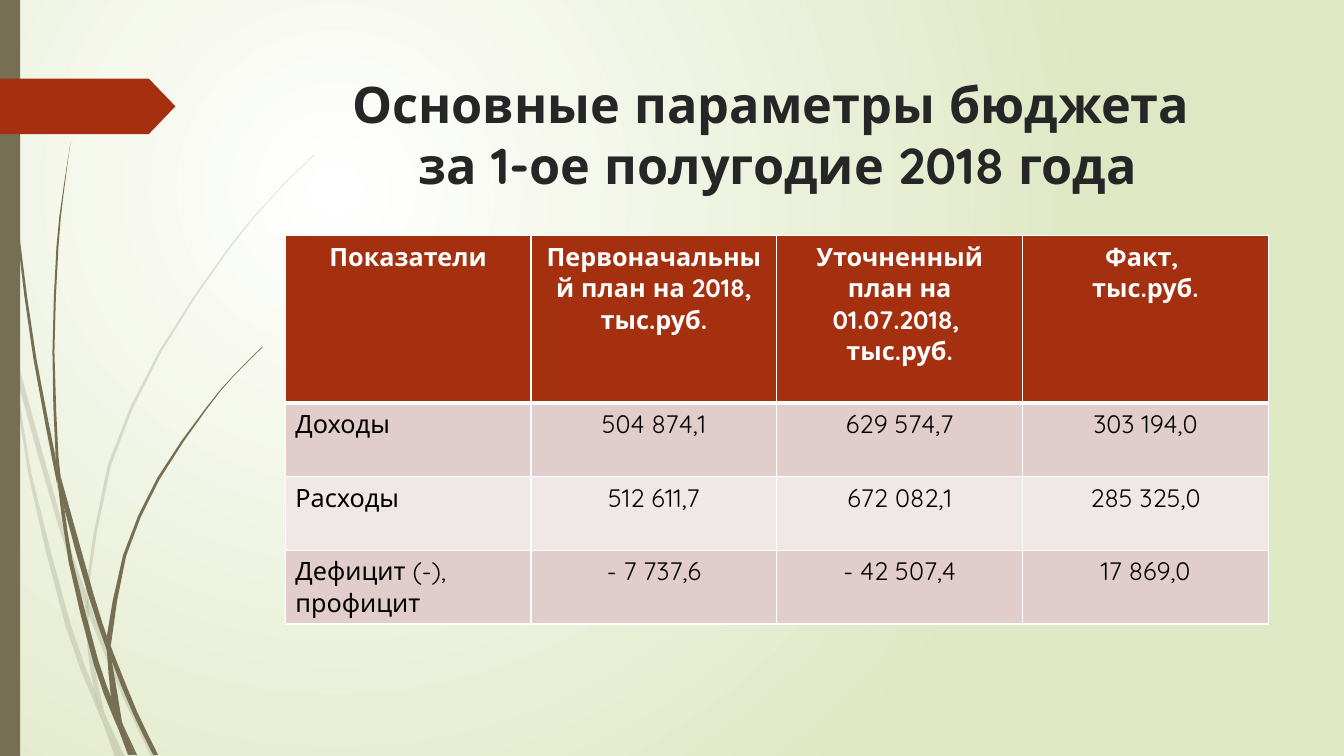
from lxml import etree
from pptx import Presentation
from pptx.dml.color import RGBColor
from pptx.enum import shapes, text
from pptx.oxml import ns
from pptx.util import Inches, Pt

WHITE = RGBColor(0xFF, 0xFF, 0xFF)
BLACK = RGBColor(0x00, 0x00, 0x00)
TITLE_GRAY = RGBColor(0x26, 0x26, 0x26)
LIME = RGBColor(0xDF, 0xE8, 0xC4)
OLIVE = RGBColor(0x76, 0x6F, 0x54)
RUST = RGBColor(0xA5, 0x30, 0x10)
PINK = RGBColor(0xE1, 0xCD, 0xCC)
PALE_PINK = RGBColor(0xF0, 0xE8, 0xE7)
FONT = "Quicksand"

# Each piece of grass: left edge and right edge, top to bottom, in inches.
PALE_GRASS = [
    ([(0, 2.82), (0, 2.99), (0.1, 3.44), (0.11, 3.5)],
     [(0, 2.82), (0.09, 3.22), (0.11, 3.5)]),
    ([(0.14, 3.45), (0.17, 3.76), (0.58, 5.22), (0.84, 5.99)],
     [(0.14, 3.45), (0.62, 5.2), (0.85, 5.86)]),
    ([(0.88, 5.96), (0.88, 6.1), (1.23, 6.94), (1.5, 7.51)],
     [(0.88, 5.96), (0.92, 6.07), (1.27, 6.92), (1.55, 7.51)]),
    ([(1.05, 7.11), (1.19, 7.51)], [(1.05, 7.11), (1.24, 7.51)]),
    ([(0.11, 3.5), (0.28, 4.7), (0.65, 6.21), (0.92, 6.93), (1.01, 7.14)],
     [(0.11, 3.5), (0.17, 3.76), (0.31, 4.69), (0.7, 6.19), (0.93, 6.83),
      (0.99, 7.07)]),
    ([(0.84, 5.99), (0.87, 6.46), (0.93, 6.83), (0.96, 6.92), (1.05, 7.11)],
     [(0.84, 5.99), (0.88, 6.08), (0.91, 6.46), (1.03, 7.06)]),
    ([(3.12, 1.53), (2.89, 1.75), (2.68, 1.97), (2.28, 2.44), (1.58, 3.48),
      (1.07, 4.61), (0.85, 5.84)],
     [(3.12, 1.54), (2.9, 1.75), (2.68, 1.98), (2.29, 2.45), (1.6, 3.49),
      (1.1, 4.62), (0.88, 5.84), (0.88, 5.96)]),
    ([(1.01, 7.14), (1.14, 7.51)], [(1.01, 7.14), (1.19, 7.51)]),
    ([(0.85, 5.86), (0.84, 5.99)], [(0.88, 5.96), (0.88, 6.1)]),
    ([(0.93, 6.83), (0.99, 7.07), (1.01, 7.14), (1.19, 7.51)],
     [(0.93, 6.83), (0.96, 6.92), (1.05, 7.11), (1.19, 7.51)]),
]
DARK_GRASS = [
    ([(0.03, 0), (0.04, 0.48), (0.07, 1.1), (0.17, 2.33), (0.33, 3.55),
      (0.56, 4.77), (0.57, 4.81)],
     [(0.04, 0), (0.05, 0.48), (0.08, 1.09), (0.19, 2.32), (0.36, 3.55),
      (0.55, 4.53), (0.57, 4.81)]),
    ([(0.6, 4.72), (0.64, 5.05), (0.88, 5.92), (1.06, 6.45)],
     [(0.6, 4.72), (0.93, 5.9), (1.06, 6.31)]),
    ([(1.1, 6.41), (1.11, 6.56), (1.32, 7.08), (1.52, 7.49)],
     [(1.1, 6.41), (1.13, 6.49), (1.36, 7.06), (1.57, 7.49)]),
    ([(0.57, 4.77), (0.68, 5.57), (0.93, 6.59), (1.11, 7.08), (1.17, 7.22)],
     [(0.57, 4.77), (0.64, 5.05), (0.72, 5.56), (0.98, 6.57), (1.1, 6.91),
      (1.16, 7.17)]),
    ([(0.7, 1.41), (0.62, 1.93), (0.56, 2.45), (0.52, 3.49), (0.55, 4.49),
      (0.6, 4.72)],
     [(0.7, 1.41), (0.63, 1.93), (0.58, 2.45), (0.54, 3.49), (0.58, 4.53)]),
    ([(1.22, 7.19), (1.33, 7.49)], [(1.22, 7.19), (1.36, 7.49)]),
    ([(0.55, 4.49), (0.57, 4.77), (0.64, 5.05)],
     [(0.55, 4.49), (0.6, 4.72), (0.64, 5.05)]),
    ([(2.6, 3.44), (2.31, 3.73), (2.04, 4.05), (1.56, 4.74), (1.22, 5.51),
      (1.06, 6.31)],
     [(2.61, 3.44), (2.31, 3.74), (2.05, 4.06), (1.58, 4.76), (1.25, 5.52),
      (1.11, 6.33), (1.1, 6.41)]),
    ([(1.17, 7.22), (1.27, 7.49)], [(1.17, 7.22), (1.31, 7.49)]),
    ([(1.06, 6.45), (1.1, 6.91), (1.16, 7.06), (1.22, 7.19)],
     [(1.06, 6.45), (1.11, 6.56), (1.21, 7.16)]),
    ([(1.06, 6.31), (1.06, 6.45)], [(1.06, 6.31), (1.1, 6.41), (1.11, 6.56)]),
    ([(1.1, 6.91), (1.17, 7.22), (1.3, 7.49)],
     [(1.1, 6.91), (1.22, 7.19), (1.33, 7.49)]),
]

TITLE = ["Основные параметры бюджета ", "за 1-ое полугодие 2018 года"]
HEADER = [
    ["Показатели"],
    ["Первоначальный план на 2018,", "тыс.руб."],
    ["Уточненный план на 01.07.2018, ", "тыс.руб."],
    ["Факт, ", "тыс.руб."],
]
BUDGET = [
    ["Доходы", "504 874,1", "629 574,7", "303 194,0"],
    ["Расходы", "512 611,7", "672 082,1", "285 325,0"],
    ["Дефицит (-), профицит", "- 7 737,6", "- 42 507,4", "17 869,0"],
]


def set_background(s):
    """Radial gradient from white, centred up and left, to lime."""
    fill = s.background.fill
    fill.gradient()
    for stop, position, color in zip(fill.gradient_stops, (0, 1), (WHITE, LIME)):
        stop.position = position
        stop.color.rgb = color
    grad = s.element.find(".//" + ns.qn("a:gradFill"))
    grad.remove(grad.find(ns.qn("a:lin")))
    circle = etree.SubElement(grad, ns.qn("a:path"), {"path": "circle"})
    etree.SubElement(circle, ns.qn("a:fillToRect"),
                     {"l": "50000", "t": "50000", "r": "100000", "b": "100000"})


def paint(sp, color, alpha=None):
    sp.shadow.inherit = False
    sp.fill.solid()
    sp.fill.fore_color.rgb = color
    sp.line.fill.background()
    if alpha is not None:
        clr = sp.element.spPr.find(".//" + ns.qn("a:srgbClr"))
        etree.SubElement(clr, ns.qn("a:alpha"), {"val": str(alpha * 1000)})


def smooth(points):
    """Add the Catmull-Rom midpoint between each two points."""
    padded = [points[0], *points, points[-1]]
    curve = []
    for a, b, c, d in zip(padded, padded[1:], padded[2:], padded[3:]):
        middle = tuple((9 * (q + r) - p - v) / 16
                       for p, q, r, v in zip(a, b, c, d))
        curve += [b, middle]
    return curve + [points[-1]]


def add_grass(s, pieces, alpha=None):
    for left, right in pieces:
        outline = [(Inches(x), Inches(y))
                   for x, y in smooth(left) + smooth(right)[::-1]]
        builder = s.shapes.build_freeform(*outline[0])
        builder.add_line_segments(outline[1:], close=True)
        paint(builder.convert_to_shape(), OLIVE, alpha)


def add_block(s, kind, left, top, width, height, color):
    sp = s.shapes.add_shape(kind, Inches(left), Inches(top),
                            Inches(width), Inches(height))
    paint(sp, color)
    return sp


def add_run(p, words, size, color, bold):
    r = p.add_run()
    r.text = words
    r.font.name = FONT
    r.font.size = Pt(size)
    r.font.bold = bold
    r.font.color.rgb = color


def set_title(s):
    title = s.shapes.title
    title.left, title.top = Inches(2.84), Inches(0.68)
    title.width, title.height = Inches(9.75), Inches(1.4)
    tf = title.text_frame
    tf.auto_size = text.MSO_AUTO_SIZE.NONE
    tf.vertical_anchor = text.MSO_ANCHOR.TOP
    p = tf.paragraphs[0]
    p.alignment = text.PP_ALIGN.CENTER
    for i, line in enumerate(TITLE):
        if i:
            p.add_line_break()
        add_run(p, line, 36, TITLE_GRAY, True)


def set_borders(cell, **widths):
    tc_pr = cell._tc.get_or_add_tcPr()
    for side, width in widths.items():
        ln = etree.SubElement(tc_pr, ns.qn("a:ln" + side), {"w": str(Pt(width))})
        solid = etree.SubElement(ln, ns.qn("a:solidFill"))
        etree.SubElement(solid, ns.qn("a:srgbClr"), {"val": str(WHITE)})


def fill_cell(cell, lines, fill, align, header):
    set_borders(cell, L=1, R=1, T=1, B=3 if header else 1)
    cell.fill.solid()
    cell.fill.fore_color.rgb = fill
    tf = cell.text_frame
    for i, line in enumerate(lines):
        p = tf.add_paragraph() if i else tf.paragraphs[0]
        p.alignment = align
        add_run(p, line, 18, WHITE if header else BLACK, header)


def add_budget_table(s):
    rows = [HEADER] + [[[value] for value in row] for row in BUDGET]
    heights = [1.66] + [0.73] * len(BUDGET)
    table = s.shapes.add_table(len(rows), len(HEADER), Inches(2.83), Inches(2.34),
                               Inches(9.75), Inches(sum(heights))).table
    for i, row in enumerate(rows):
        table.rows[i].height = Inches(heights[i])
        fill = RUST if i == 0 else PINK if i % 2 else PALE_PINK
        for j, lines in enumerate(row):
            align = text.PP_ALIGN.LEFT if i and not j else text.PP_ALIGN.CENTER
            fill_cell(table.cell(i, j), lines, fill, align, i == 0)


def main():
    prs = Presentation()
    prs.slide_width, prs.slide_height = Inches(13.33), Inches(7.5)
    s = prs.slides.add_slide(prs.slide_layouts[5])
    set_background(s)
    add_grass(s, PALE_GRASS, alpha=20)
    add_grass(s, DARK_GRASS)
    add_block(s, shapes.MSO_SHAPE.RECTANGLE, 0, 0, 0.2, 7.5, OLIVE)
    arrow = add_block(s, shapes.MSO_SHAPE.PENTAGON, 0, 0.78, 1.74, 0.55, RUST)
    arrow.adjustments[0] = 0.48
    set_title(s)
    add_budget_table(s)
    prs.save("out.pptx")


if __name__ == "__main__":
    main()
